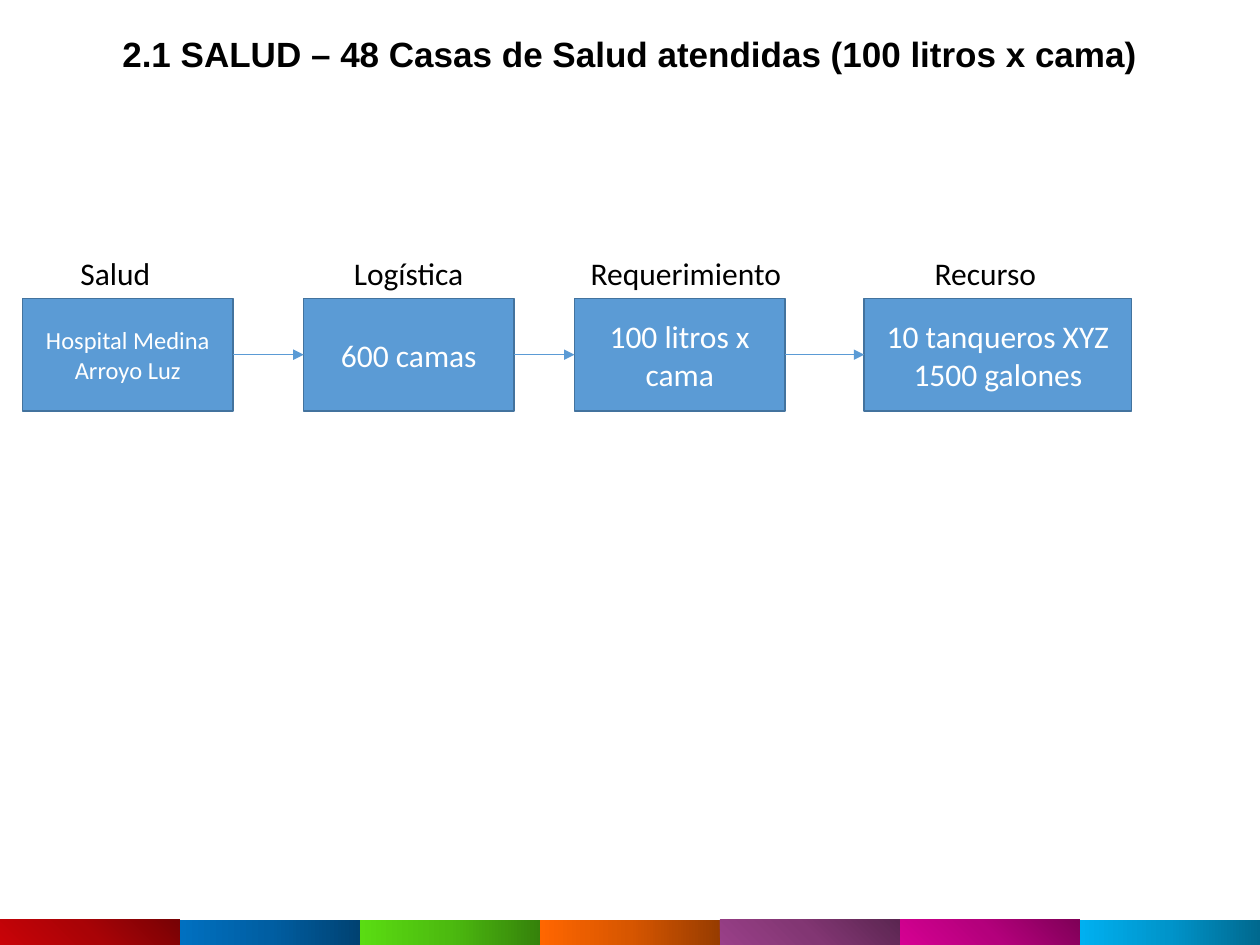
from dataclasses import dataclass
from itertools import pairwise

from lxml.etree import SubElement
from pptx import Presentation
from pptx.dml.color import RGBColor
from pptx.enum.shapes import MSO_CONNECTOR, MSO_SHAPE
from pptx.enum.text import MSO_ANCHOR, MSO_AUTO_SIZE, PP_ALIGN
from pptx.oxml.ns import qn
from pptx.util import Inches, Pt


@dataclass(frozen=True)
class Theme:
    """Colours, fonts and type sizes of the slide."""
    ink: str = "000000"
    paper: str = "FFFFFF"
    step_fill: str = "5B9BD5"
    step_line: str = "43739E"
    title_font: str = "Arial"
    body_font: str = "Calibri"
    title_size: int = 20
    body_size: int = 18
    small_size: int = 14
    band: tuple = (
        ("770205", "A90306", "C90308", "circle"),
        ("004272", "005EA2", "0070C0", "linear"),
        ("35820B", "4CBA0F", "5ADC12", "linear"),
        ("973C00", "D75600", "FF6600", "linear"),
        ("5B2651", "823673", "9A4089", "circle"),
        ("7F0057", "B4007C", "D60093", "circle"),
        ("00688E", "0094CA", "00B0F0", "linear"),
    )


THEME = Theme()

STEPS = (
    ("Salud", 0.36, 0.76, "Hospital Medina Arroyo Luz", 0, 1.67, THEME.small_size),
    ("Logística", 2.53, 1.08, "600 camas", 2.23, 1.67, THEME.body_size),
    ("Requerimiento", 4.41, 1.73, "100 litros x cama", 4.38, 1.67, THEME.body_size),
    ("Recurso", 7.14, 1.02, "10 tanqueros XYZ 1500 galones", 6.68, 2.12, THEME.body_size),
)


def write(frame, text, font, size, color, align, bold=False):
    """Put one formatted run in a text frame."""
    paragraph = frame.paragraphs[0]
    paragraph.alignment = align
    run = paragraph.add_run()
    run.text = text
    run.font.name = font
    run.font.size = Pt(size)
    run.font.bold = bold
    run.font.color.rgb = RGBColor.from_string(color)


def add_title(slide, left, top, width, height):
    """Move and format the title placeholder."""
    title = slide.shapes.title
    title.left, title.top = Inches(left), Inches(top)
    title.width, title.height = Inches(width), Inches(height)
    frame = title.text_frame
    frame.word_wrap = False
    frame.auto_size = MSO_AUTO_SIZE.SHAPE_TO_FIT_TEXT
    frame.vertical_anchor = MSO_ANCHOR.TOP
    write(frame, "2.1 SALUD – 48 Casas de Salud atendidas (100 litros x cama)",
          THEME.title_font, THEME.title_size, THEME.ink, PP_ALIGN.CENTER, bold=True)


def fill_gradient(segment, colors, style):
    """Give a shape a three-stop linear or circular gradient."""
    segment.fill.gradient()
    gradient = segment._element.spPr.find(qn("a:gradFill"))
    for child in list(gradient):
        gradient.remove(child)
    stops = SubElement(gradient, qn("a:gsLst"))
    for position, color in zip((0, 50000, 100000), colors):
        stop = SubElement(stops, qn("a:gs"), pos=str(position))
        SubElement(stop, qn("a:srgbClr"), val=color)
    if style == "circle":
        circle = SubElement(gradient, qn("a:path"), path="circle")
        SubElement(circle, qn("a:fillToRect"), l="100000", b="100000")
    else:
        SubElement(gradient, qn("a:lin"), ang="10800000", scaled="0")


def add_color_band(slide, left, top, width, height):
    """Draw the grouped row of equal gradient segments."""
    band = slide.shapes.add_group_shape()
    segment_width = width / len(THEME.band)
    for index, (*colors, style) in enumerate(THEME.band):
        segment = band.shapes.add_shape(
            MSO_SHAPE.RECTANGLE, Inches(left + index * segment_width), Inches(top),
            Inches(segment_width), Inches(height))
        segment.shadow.inherit = False
        segment.line.fill.background()
        fill_gradient(segment, colors, style)


def add_step(slide, text, size, left, top, width, height):
    """Draw one process box and return it."""
    step = slide.shapes.add_shape(
        MSO_SHAPE.RECTANGLE, Inches(left), Inches(top), Inches(width), Inches(height))
    step.shadow.inherit = False
    step.fill.solid()
    step.fill.fore_color.rgb = RGBColor.from_string(THEME.step_fill)
    step.line.color.rgb = RGBColor.from_string(THEME.step_line)
    step.line.width = Pt(1)
    step.text_frame.word_wrap = True
    step.text_frame.vertical_anchor = MSO_ANCHOR.MIDDLE
    write(step.text_frame, text, THEME.body_font, size, THEME.paper, PP_ALIGN.CENTER)
    return step


def add_heading(slide, text, left, top, width, height):
    """Write the heading above a process box."""
    heading = slide.shapes.add_textbox(
        Inches(left), Inches(top), Inches(width), Inches(height))
    heading.text_frame.word_wrap = False
    heading.text_frame.auto_size = MSO_AUTO_SIZE.SHAPE_TO_FIT_TEXT
    write(heading.text_frame, text, THEME.body_font, THEME.body_size,
          THEME.ink, PP_ALIGN.LEFT)


def add_arrow(slide, source, target):
    """Connect the right side of one box to the left side of the next."""
    arrow = slide.shapes.add_connector(MSO_CONNECTOR.STRAIGHT, 0, 0, 0, 0)
    arrow.begin_connect(source, 3)
    arrow.end_connect(target, 1)
    arrow.line.color.rgb = RGBColor.from_string(THEME.step_fill)
    arrow.line.width = Pt(0.5)
    SubElement(arrow.line._get_or_add_ln(), qn("a:tailEnd"), type="triangle")
    SubElement(arrow._element.spPr, qn("a:effectLst"))


def add_process(slide, left, top, height):
    """Draw the headed boxes and the arrows between them."""
    heading_height = 0.4
    boxes = []
    for heading, heading_left, heading_width, text, box_left, box_width, size in STEPS:
        boxes.append(add_step(slide, text, size, left + box_left, top + heading_height,
                              box_width, height - heading_height))
        add_heading(slide, heading, left + heading_left, top, heading_width, heading_height)
    for source, target in pairwise(boxes):
        add_arrow(slide, source, target)


def main():
    """Build and save the slide."""
    presentation = Presentation()
    presentation.slide_width, presentation.slide_height = Inches(10), Inches(7.5)
    slide = presentation.slides.add_slide(presentation.slide_layouts[5])
    add_title(slide, 0.84, 0.21, 8.32, 0.44)
    add_color_band(slide, 0, 7.3, 10, 0.21)
    add_process(slide, 0.18, 1.97, 1.29)
    presentation.save("out.pptx")


if __name__ == "__main__":
    main()
